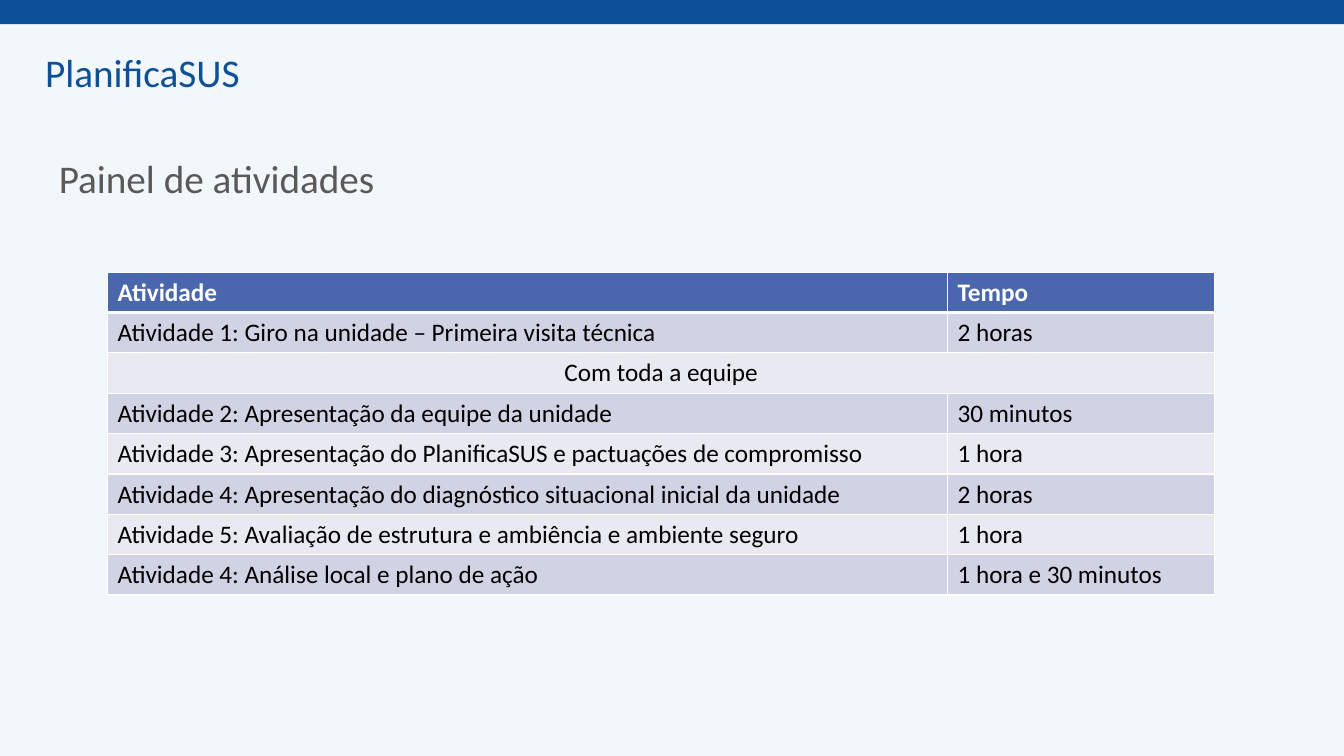
from dataclasses import dataclass

from lxml import etree
from pptx import Presentation
from pptx.dml.color import RGBColor
from pptx.enum.shapes import MSO_SHAPE
from pptx.enum.text import MSO_ANCHOR, MSO_AUTO_SIZE, PP_ALIGN
from pptx.oxml.ns import qn
from pptx.util import Inches, Pt

RECTANGLE = MSO_SHAPE.RECTANGLE
MIDDLE = MSO_ANCHOR.MIDDLE
TOP = MSO_ANCHOR.TOP
FIT_SHAPE = MSO_AUTO_SIZE.SHAPE_TO_FIT_TEXT
FIXED = MSO_AUTO_SIZE.NONE
LEFT = PP_ALIGN.LEFT
CENTER = PP_ALIGN.CENTER
TITLE_ONLY = 5
COLUMNS, ROWS = 160, 75


@dataclass(frozen=True)
class Theme:
    font: str = "Calibri"
    background: str = "F2F7FB"
    brand: str = "0D5095"
    heading: str = "595959"
    header: str = "4A66AC"
    bands: tuple = ("D0D3E3", "E9EAF1")
    ink: str = "000000"
    white: str = "FFFFFF"
    heading_size: int = 28
    table_size: int = 18
    rule: int = 1
    header_rule: int = 3


def paint(fill, color):
    fill.solid()
    fill.fore_color.rgb = RGBColor.from_string(color)


def write(frame, text, *, font, size, color, bold=False, align=LEFT, spacing=None):
    para = frame.paragraphs[0]
    para.alignment = align
    para.line_spacing = spacing
    span = para.add_run()
    span.text = text
    span.font.name = font
    span.font.size = Pt(size)
    span.font.bold = bold
    span.font.color.rgb = RGBColor.from_string(color)


def draw_border(cell, side, color, width):
    line = etree.SubElement(cell._tc.get_or_add_tcPr(), qn(f"a:ln{side}"), w=str(Pt(width)))
    fill = etree.SubElement(line, qn("a:solidFill"))
    etree.SubElement(fill, qn("a:srgbClr"), val=color)


class SlideBuilder:
    def __init__(self, deck, theme):
        self.theme = theme
        self.column = deck.slide_width / COLUMNS
        self.row = deck.slide_height / ROWS
        self.page = deck.slides.add_slide(deck.slide_layouts[TITLE_ONLY])
        paint(self.page.background.fill, theme.background)

    def place(self, left, top, width, height):
        return (round(left * self.column), round(top * self.row),
                round(width * self.column), round(height * self.row))

    def bar(self, *area):
        bar = self.page.shapes.add_shape(RECTANGLE, *self.place(*area))
        bar.shadow.inherit = False
        paint(bar.fill, self.theme.brand)
        bar.line.fill.background()

    def label(self, text, *area):
        frame = self.page.shapes.add_textbox(*self.place(*area)).text_frame
        frame.word_wrap = False
        frame.auto_size = FIT_SHAPE
        write(frame, text, font=self.theme.font, size=self.theme.heading_size,
              color=self.theme.brand)

    def title(self, text, *area):
        box = self.page.shapes.title
        box.left, box.top, box.width, box.height = self.place(*area)
        frame = box.text_frame
        frame.word_wrap = True
        frame.auto_size = FIXED
        frame.vertical_anchor = MIDDLE
        write(frame, text, font=self.theme.font, size=self.theme.heading_size,
              color=self.theme.heading, spacing=0.9)

    def table(self, records, left, top, widths, row_height):
        area = self.place(left, top, sum(widths), row_height * len(records))
        table = self.page.shapes.add_table(len(records), len(widths), *area).table
        for column, width in zip(table.columns, widths):
            column.width = round(width * self.column)
        for index, record in enumerate(records):
            table.rows[index].height = round(row_height * self.row)
            for position in range(len(widths)):
                self.style_cell(table.cell(index, position), index)
            spans_row = len(record) == 1
            if spans_row:
                table.cell(index, 0).merge(table.cell(index, len(widths) - 1))
            for position, text in enumerate(record):
                write(table.cell(index, position).text_frame, text,
                      font=self.theme.font, size=self.theme.table_size,
                      color=self.theme.ink if index else self.theme.white,
                      bold=index == 0, align=CENTER if spans_row else LEFT)

    def style_cell(self, cell, index):
        theme = self.theme
        header_edge = {0: "B", 1: "T"}.get(index)
        for side in "LRTB":
            width = theme.header_rule if side == header_edge else theme.rule
            draw_border(cell, side, theme.white, width)
        paint(cell.fill, theme.bands[(index - 1) % 2] if index else theme.header)
        cell.vertical_anchor = TOP


ACTIVITIES = [
    ("Atividade", "Tempo"),
    ("Atividade 1: Giro na unidade – Primeira visita técnica", "2 horas"),
    ("Com toda a equipe",),
    ("Atividade 2: Apresentação da equipe da unidade", "30 minutos"),
    ("Atividade 3: Apresentação do PlanificaSUS e pactuações de compromisso", "1 hora"),
    ("Atividade 4: Apresentação do diagnóstico situacional inicial da unidade", "2 horas"),
    ("Atividade 5: Avaliação de estrutura e ambiência e ambiente seguro", "1 hora"),
    ("Atividade 4: Análise local e plano de ação", "1 hora e 30 minutos"),
]


def main():
    deck = Presentation()
    deck.slide_width, deck.slide_height = Inches(13.33), Inches(7.5)
    slide = SlideBuilder(deck, Theme())
    slide.bar(0, 0, COLUMNS, 2.4)
    slide.label("PlanificaSUS", 4.2, 4.3, 25.8, 5.7)
    slide.title("Painel de atividades", 5.8, 10.7, 132, 14.5)
    slide.table(ACTIVITIES, left=12.8, top=27, widths=(100, 31.8), row_height=4)
    deck.save("out.pptx")


if __name__ == "__main__":
    main()
